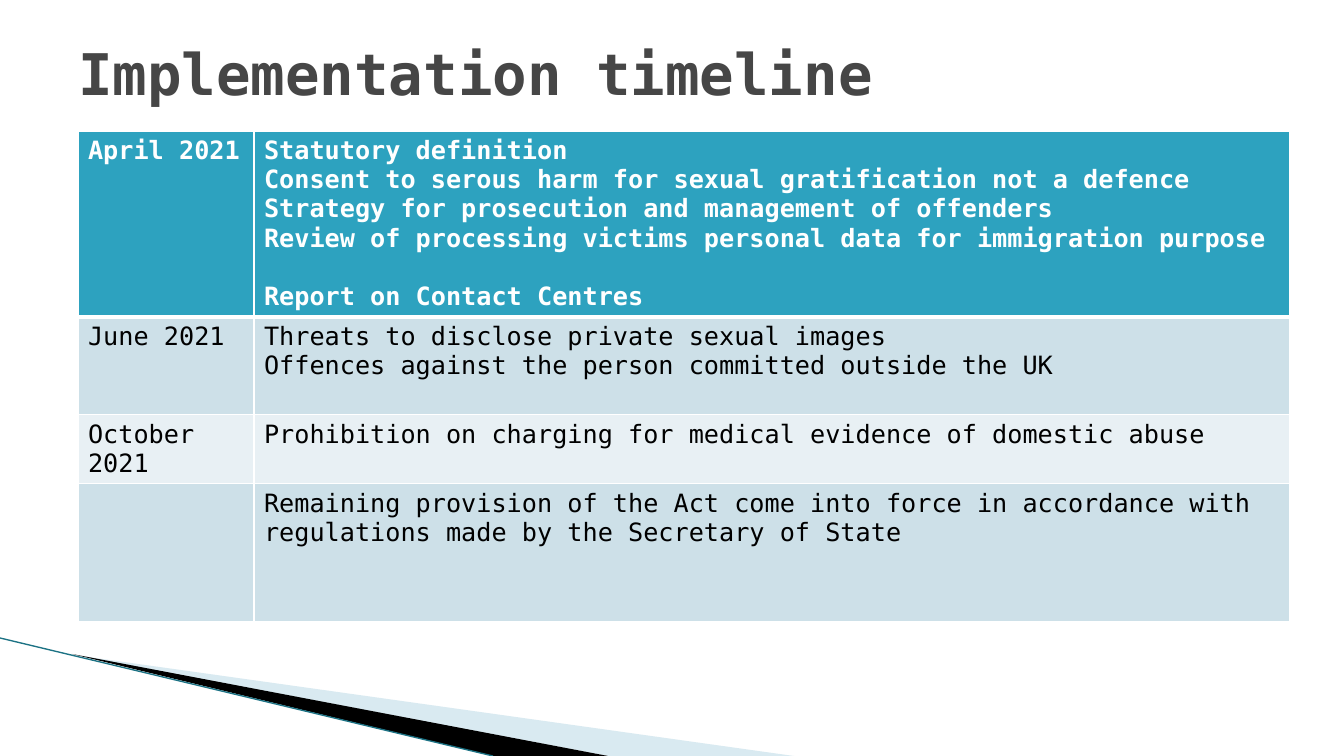
from dataclasses import dataclass

from lxml import etree
from pptx import Presentation
from pptx.dml.color import RGBColor
from pptx.enum.shapes import MSO_CONNECTOR
from pptx.enum.text import MSO_ANCHOR, PP_ALIGN
from pptx.oxml.ns import qn
from pptx.util import Pt

STRAIGHT = MSO_CONNECTOR.STRAIGHT
MIDDLE, TOP = MSO_ANCHOR.MIDDLE, MSO_ANCHOR.TOP
LEFT = PP_ALIGN.LEFT
SLIDE_W, SLIDE_H = 1344, 756
SCALE = 12192000 / SLIDE_W


@dataclass(frozen=True)
class Theme:
    font: str = "DejaVu Sans Mono"
    title_size: int = 41
    body_size: int = 18
    title: str = "464646"
    text: str = "000000"
    header_text: str = "FFFFFF"
    header: str = "2DA2BF"
    band_dark: str = "CDE0E8"
    band_light: str = "E8F0F4"
    border: str = "FFFFFF"
    wedge_pale: str = "A0CBDC"
    wedge_dark: str = "000000"
    edge: str = "1C7284"


THEME = Theme()
COLUMNS = [176, 1036]
ROW_HEIGHTS = [184, 98, 69, 138]
TIMELINE = [
    (["April 2021"],
     ["Statutory definition",
      "Consent to serous harm for sexual gratification not a defence",
      "Strategy for prosecution and management of offenders",
      "Review of processing victims personal data for immigration purpose",
      "Report on Contact Centres"]),
    (["June 2021"],
     ["Threats to disclose private sexual images",
      "Offences against the person committed outside the UK"]),
    (["October 2021"],
     ["Prohibition on charging for medical evidence of domestic abuse"]),
    ([],
     ["Remaining provision of the Act come into force in accordance with "
      "regulations made by the Secretary of State"]),
]
SPACED_ENTRY = "Report on Contact Centres"


def px(n):
    return round(n * SCALE)


def rgb(code):
    return RGBColor.from_string(code)


def set_font(font, color, **values):
    for name, value in {"name": THEME.font, **values}.items():
        setattr(font, name, value)
    font.color.rgb = rgb(color)


def set_borders(cell, is_header):
    tcPr = cell._tc.get_or_add_tcPr()
    widths = {"lnL": 1, "lnR": 1, "lnT": 1, "lnB": 3 if is_header else 1}
    for i, (tag, width) in enumerate(widths.items()):
        ln = etree.Element(qn(f"a:{tag}"), w=str(Pt(width)))
        fill = etree.SubElement(ln, qn("a:solidFill"))
        etree.SubElement(fill, qn("a:srgbClr"), val=THEME.border)
        tcPr.insert(i, ln)


def fill_cell(cell, lines, color, is_header):
    cell.fill.solid()
    cell.fill.fore_color.rgb = rgb(color)
    cell.vertical_anchor = TOP
    set_borders(cell, is_header)
    tf = cell.text_frame
    tf.text = "\n".join(lines)
    for p in tf.paragraphs:
        set_font(p.font, THEME.header_text if is_header else THEME.text,
                 size=Pt(THEME.body_size), bold=is_header)
        if p.text == SPACED_ENTRY:
            p.space_before = Pt(21)


def add_timeline(s, x, y):
    frame = s.shapes.add_table(len(TIMELINE), len(COLUMNS), px(x), px(y),
                               px(sum(COLUMNS)), px(sum(ROW_HEIGHTS)))
    table = frame.table
    for column, width in zip(table.columns, COLUMNS):
        column.width = px(width)
    bands = [THEME.band_light, THEME.band_dark]
    for i, (row, height) in enumerate(zip(table.rows, ROW_HEIGHTS)):
        row.height = px(height)
        color = bands[i % 2] if i else THEME.header
        for cell, lines in zip(row.cells, TIMELINE[i]):
            fill_cell(cell, lines, color, i == 0)


def add_wedge(s, points, color, alpha=100):
    builder = s.shapes.build_freeform(*points[0], scale=SCALE)
    builder.add_line_segments(points[1:], close=True)
    sp = builder.convert_to_shape()
    sp.shadow.inherit = False
    sp.line.fill.background()
    sp.fill.solid()
    sp.fill.fore_color.rgb = rgb(color)
    if alpha < 100:
        clr = sp._element.spPr.find(f".//{qn('a:srgbClr')}")
        etree.SubElement(clr, qn("a:alpha"), val=str(alpha * 1000))


def add_corner_sweep(s, x, y, w, h):
    """Two wedges and an edge line, fanning out along the bottom of the box."""
    bottom = y + h
    add_wedge(s, [(x + 74, y + 17), (x + w, bottom), (x + 608, bottom)],
              THEME.wedge_pale, alpha=40)
    add_wedge(s, [(x + 72, y + 16), (x + 608, bottom), (x + 493, bottom)],
              THEME.wedge_dark)
    line = s.shapes.add_connector(STRAIGHT, px(x), px(y), px(x + 493), px(bottom))
    line.line.color.rgb = rgb(THEME.edge)
    line.line.width = Pt(0.95)
    etree.SubElement(line._element.spPr, qn("a:effectLst"))


def set_title(s, x, y, w, h):
    sp = s.shapes.title
    box = {"left": x, "top": y, "width": w, "height": h}
    for name, value in box.items():
        setattr(sp, name, px(value))
    tf = sp.text_frame
    tf.text = "Implementation timeline"
    tf.vertical_anchor = MIDDLE
    p = tf.paragraphs[0]
    p.alignment = LEFT
    set_font(p.runs[0].font, THEME.title, size=Pt(THEME.title_size), bold=True)


def main():
    prs = Presentation()
    prs.slide_width, prs.slide_height = px(SLIDE_W), px(SLIDE_H)
    s = prs.slides.add_slide(prs.slide_layouts[5])
    add_corner_sweep(s, 0, 638, 794, SLIDE_H - 638)
    set_title(s, 68, 30, 1210, 85)
    add_timeline(s, 78, 131)
    prs.save("out.pptx")


if __name__ == "__main__":
    main()
